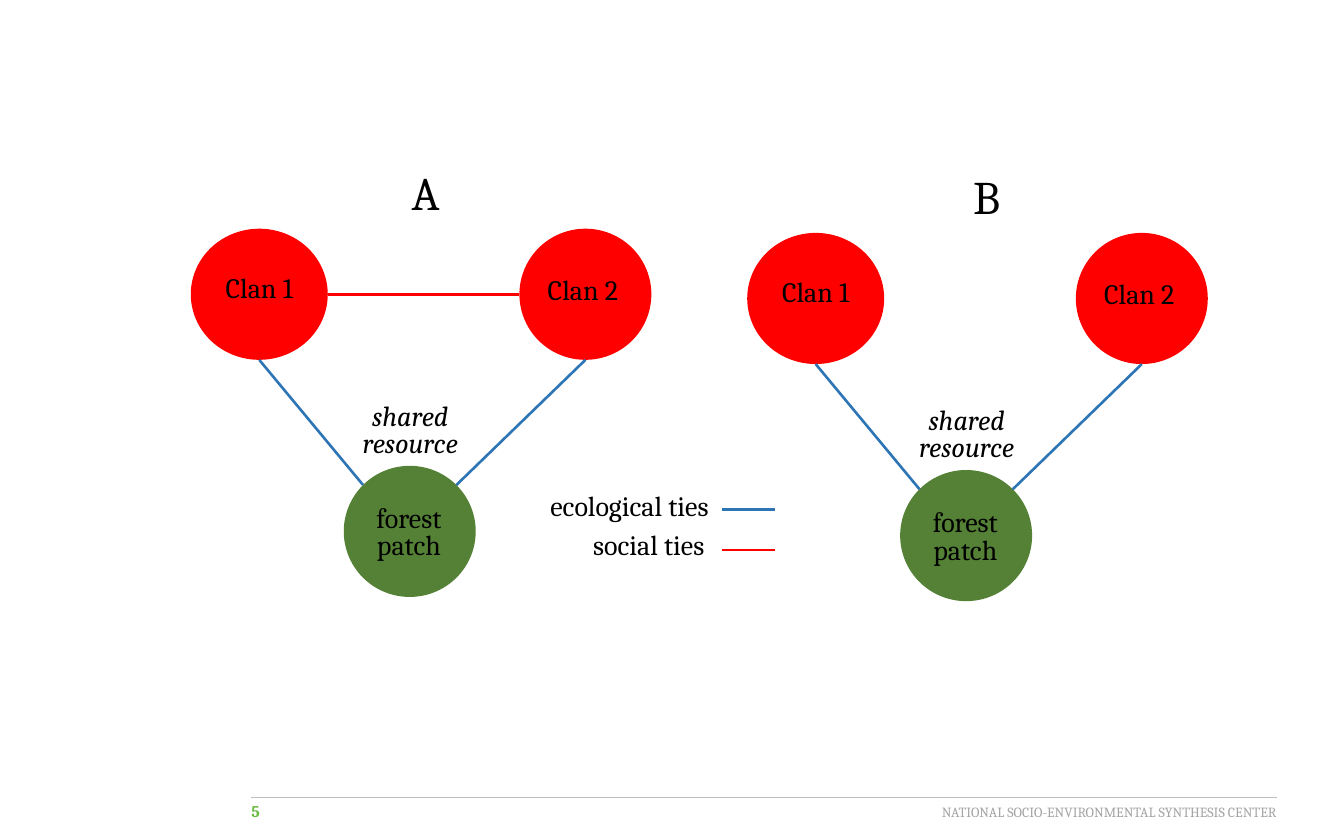
from math import sqrt

from lxml import etree
from pptx import Presentation
from pptx.dml.color import RGBColor
from pptx.enum.shapes import MSO_CONNECTOR, MSO_SHAPE
from pptx.enum.text import PP_ALIGN
from pptx.oxml.ns import qn
from pptx.util import Inches, Pt

LEFT, CENTER, RIGHT = PP_ALIGN.LEFT, PP_ALIGN.CENTER, PP_ALIGN.RIGHT
OVAL, STRAIGHT = MSO_SHAPE.OVAL, MSO_CONNECTOR.STRAIGHT

BLACK = RGBColor(0x00, 0x00, 0x00)
RED = RGBColor(0xFF, 0x00, 0x00)
BLUE = RGBColor(0x2E, 0x75, 0xB5)
FOREST_GREEN = RGBColor(0x54, 0x81, 0x35)
NUMBER_GREEN = RGBColor(0x6B, 0xBB, 0x42)
FOOTER_GRAY = RGBColor(0xA5, 0xA5, 0xA5)
RULE_GRAY = RGBColor(0xBF, 0xBF, 0xBF)
FONT = "Cambria"

# Content: panel letter, letter left, panel origin, whether the clans are tied
PANELS = [
    ("A", 4.8, (2.27, 2.72), True),
    ("B", 11.48, (8.89, 2.77), False),
]
# Circles relative to the panel origin: left, top, width, height
CLAN_1 = (0, 0, 1.63, 1.56)
CLAN_2 = (3.91, 0, 1.57, 1.56)
FOREST = (1.82, 2.82, 1.57, 1.56)
CIRCLES = [(CLAN_1, RED), (CLAN_2, RED), (FOREST, FOREST_GREEN)]
# Labels relative to the panel origin: text, box, line spacing, italic
LABELS = [
    ("Clan 1", (0.24, 0.45, 1.15, 0.5), 1.0, False),
    ("Clan 2", (4.09, 0.47, 1.15, 0.5), 1.0, False),
    ("forest patch", (1.9, 3.26, 1.39, 0.76), 0.81, False),
    ("shared resource", (1.82, 2.05, 1.58, 0.74), 0.79, True),
]
# Legend: text, box, line height, colour
LEGEND = [
    ("ecological ties", (6.45, 5.76, 2.2, 0.5), 6.06, BLUE),
    ("social ties", (6.96, 6.22, 1.6, 0.5), 6.54, RED),
]
LEGEND_LINE = (8.59, 9.22)
FOOTER_LEFT, FOOTER_RIGHT, FOOTER_TOP = 2.99, 15.19, 9.48

presentation = Presentation()
presentation.slide_width = Inches(15.99)
presentation.slide_height = Inches(9.99)
slide = presentation.slides.add_slide(presentation.slide_layouts[6])


def add_text(text, box, size=24, color=BLACK, align=LEFT, bold=False,
             italic=False, spacing=1.0, side_inset=0.1):
    shape = slide.shapes.add_textbox(*map(Inches, box))
    frame = shape.text_frame
    frame.word_wrap = True
    frame.margin_left = frame.margin_right = Inches(side_inset)
    paragraph = frame.paragraphs[0]
    paragraph.text = text
    paragraph.alignment = align
    paragraph.line_spacing = spacing
    font = paragraph.font
    font.name, font.size, font.bold, font.italic = FONT, Pt(size), bold, italic
    font.color.rgb = color


def add_line(start, end, color, width=2.25):
    line = slide.shapes.add_connector(STRAIGHT, *map(Inches, (*start, *end)))
    line.line.color.rgb = color
    line.line.width = Pt(width)
    etree.SubElement(line._element.spPr, qn("a:effectLst"))


def add_circle(box, color):
    circle = slide.shapes.add_shape(OVAL, *map(Inches, box))
    circle.shadow.inherit = False
    circle.fill.solid()
    circle.fill.fore_color.rgb = color
    circle.line.fill.background()


def place(box, origin):
    left, top, width, height = box
    return left + origin[0], top + origin[1], width, height


def edge_point(box, across, down):
    """Point on a circle's rim; across and down run from -1 to 1."""
    left, top, width, height = box
    return left + width / 2 * (1 + across), top + height / 2 * (1 + down)


# Footer
add_line((FOOTER_LEFT, FOOTER_TOP), (FOOTER_RIGHT, FOOTER_TOP), RULE_GRAY, 0.75)
add_text("5", (FOOTER_LEFT, FOOTER_TOP, 0.58, 0.29), 14, NUMBER_GREEN,
         bold=True, side_inset=0)
add_text("NATIONAL SOCIO-ENVIRONMENTAL SYNTHESIS CENTER",
         (10.14, 9.51, 5.05, 0.3), 12, FOOTER_GRAY, RIGHT, side_inset=0)

# Legend
for text, box, line_y, color in LEGEND:
    add_text(text, box)
    add_line((LEGEND_LINE[0], line_y), (LEGEND_LINE[1], line_y), color)

# Network panels
DIAGONAL = sqrt(0.5)
for letter, letter_left, origin, clans_tied in PANELS:
    clan_1, clan_2, forest = (place(box, origin) for box in (CLAN_1, CLAN_2, FOREST))
    for box, color in CIRCLES:
        add_circle(place(box, origin), color)
    for clan, side in ((clan_1, -1), (clan_2, 1)):
        add_line(edge_point(clan, 0, 1),
                 edge_point(forest, side * DIAGONAL, -DIAGONAL), BLUE)
    if clans_tied:
        add_line(edge_point(clan_1, 1, 0), edge_point(clan_2, -1, 0), RED)
    for text, box, spacing, italic in LABELS:
        add_text(text, place(box, origin), align=CENTER, italic=italic, spacing=spacing)
    add_text(letter, (letter_left, origin[1] - 0.82, 0.55, 0.77), 40)

presentation.save("out.pptx")
